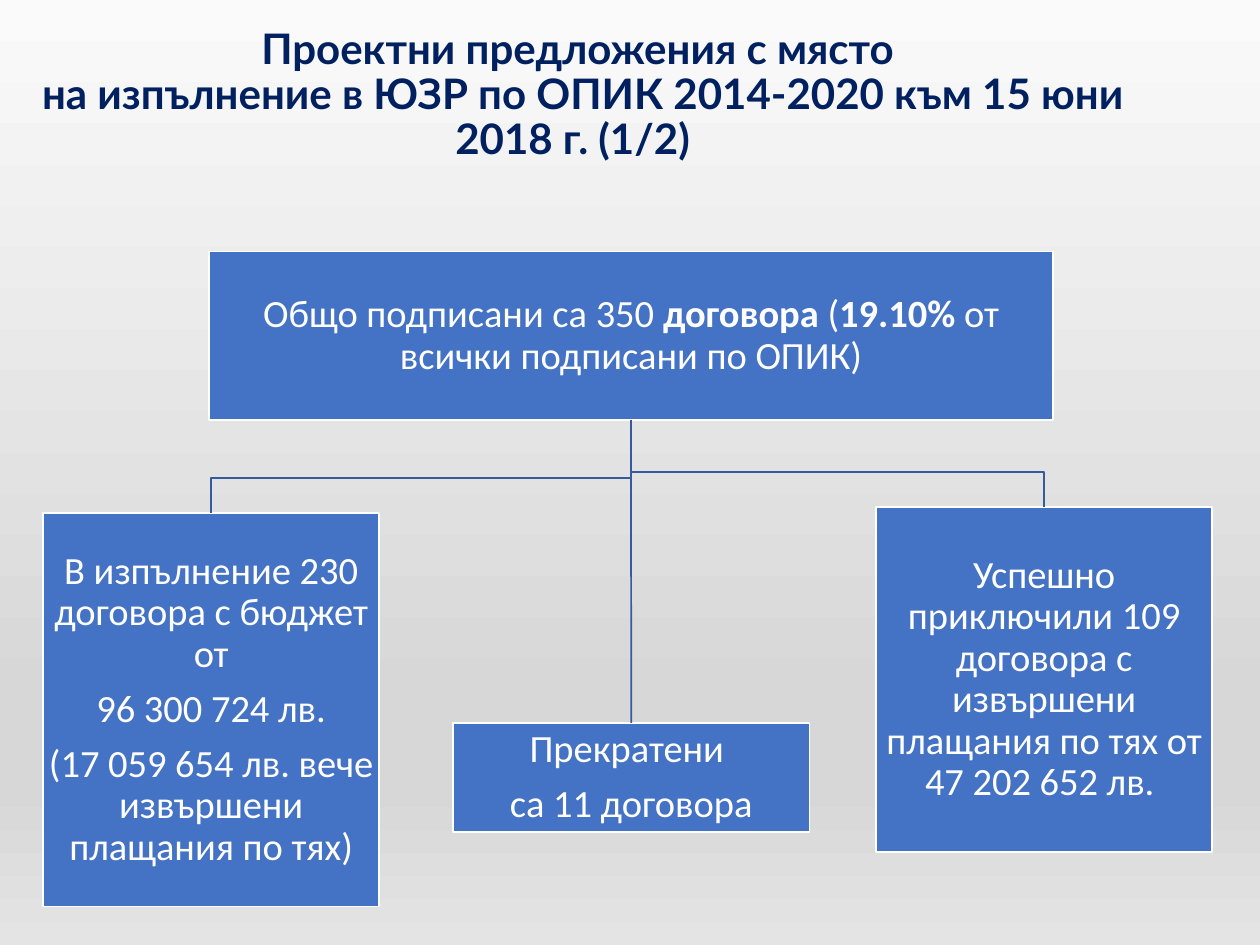
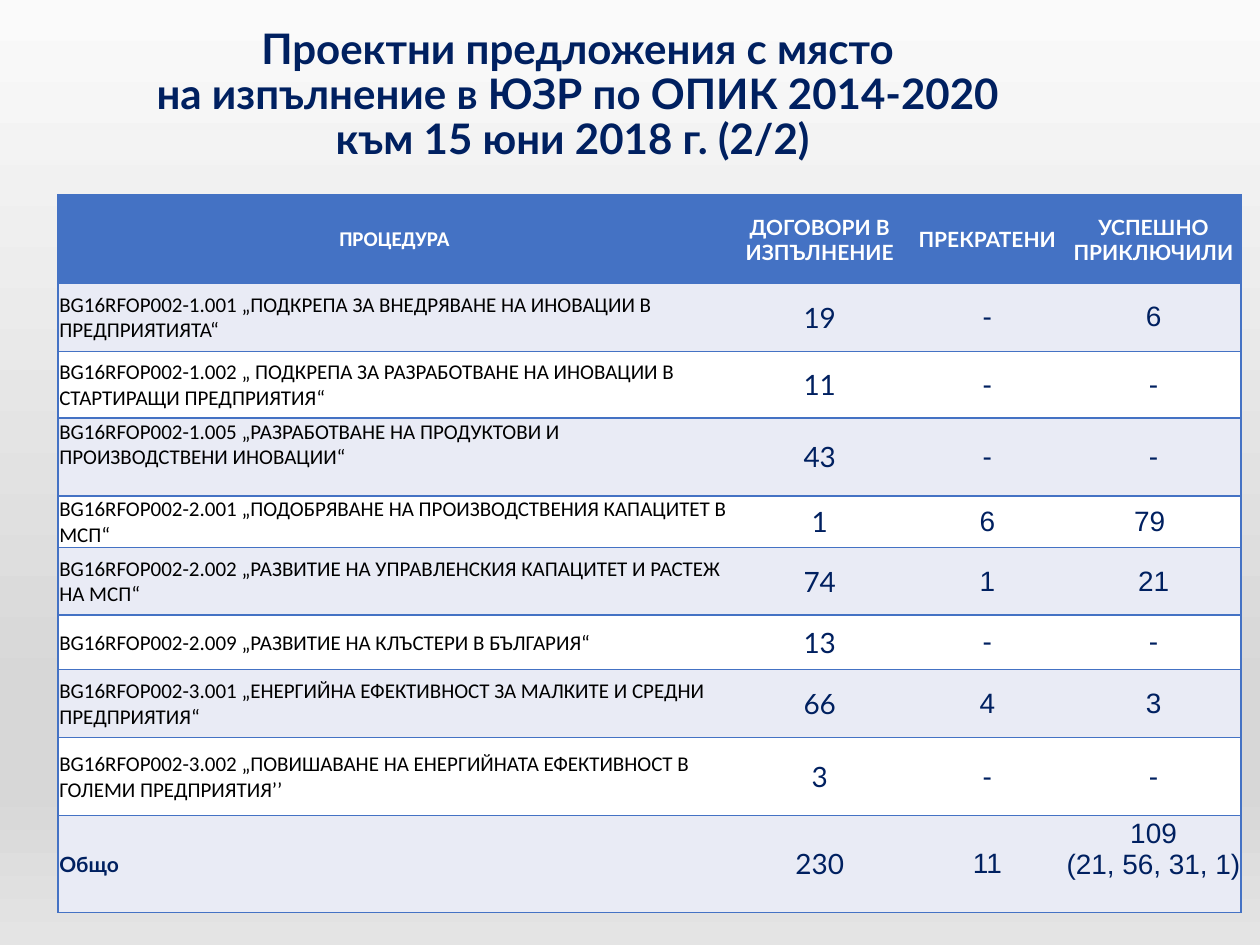
import pptx
import pptx.dml.color
import pptx.enum.shapes
import pptx.enum.text
import pptx.oxml
import pptx.oxml.ns
import pptx.util
import lxml.etree

Pt = pptx.util.Pt
RGBColor = pptx.dml.color.RGBColor
qn = pptx.oxml.ns.qn
CENTER = pptx.enum.text.PP_ALIGN.CENTER
LEFT = pptx.enum.text.PP_ALIGN.LEFT
MIDDLE = pptx.enum.text.MSO_ANCHOR.MIDDLE

NAVY = RGBColor(0x00, 0x20, 0x60)
BLUE = RGBColor(0x44, 0x72, 0xC4)
LINE_BLUE = RGBColor(0x36, 0x5B, 0x9D)
BAND = RGBColor(0xE9, 0xEB, 0xF5)
WHITE = RGBColor(0xFF, 0xFF, 0xFF)
BLACK = RGBColor(0x00, 0x00, 0x00)
BACKGROUND_STOPS = [(0, "FAFAFA"), (74, "D7D7D7"), (83, "D7D7D7"), (100, "E4E4E4")]

TITLE_FONT = {"name": "Lato", "size": Pt(24), "bold": True}
BOX_FONT = {"name": "Calibri", "size": Pt(22)}


def write_paragraph(paragraph, runs, font, color, alignment=CENTER):
    """Write (text, bold) runs; a vertical tab in the text is a line break."""
    paragraph.alignment = alignment
    for text, bold in runs:
        for index, line in enumerate(text.split("\v")):
            if index:
                paragraph.add_line_break()
            run = paragraph.add_run()
            run.text = line
            for name, value in {**font, "bold": bold}.items():
                setattr(run.font, name, value)
            run.font.color.rgb = color


def set_frame(frame, left, top, right, bottom):
    """Wrap the text, centre it vertically and set the margins."""
    margins = {"left": left, "top": top, "right": right, "bottom": bottom}
    for side, margin in margins.items():
        setattr(frame, "margin_" + side, Pt(margin))
    frame.word_wrap = True
    frame.vertical_anchor = MIDDLE


presentation = pptx.Presentation()
presentation.slide_width = Pt(720)
presentation.slide_height = Pt(540)

# Shared background
master = presentation.slide_master
background = master.background.fill
background.gradient()
background.gradient_angle = 270
stop_list = master.element.find(".//" + qn("p:bg")).find(".//" + qn("a:gsLst"))
for stop in list(stop_list):
    stop_list.remove(stop)
for position, color in BACKGROUND_STOPS:
    stop = lxml.etree.SubElement(stop_list, qn("a:gs"), pos=str(position * 1000))
    lxml.etree.SubElement(stop, qn("a:srgbClr"), val=color)

# Slides with their titles
TITLES = [
    "Проектни предложения с място\v на изпълнение в ЮЗР по ОПИК 2014-2020 към 15 юни 2018 г. (1/2) ",
    "Проектни предложения с място\v на изпълнение в ЮЗР по ОПИК 2014-2020 \vкъм 15 юни 2018 г. (2/2) ",
]
slides = []
for title in TITLES:
    slide = presentation.slides.add_slide(presentation.slide_layouts[6])
    title_box = slide.shapes.add_textbox(Pt(8.6), Pt(14.4), Pt(643), Pt(80.6))
    set_frame(title_box.text_frame, 7.2, 3.6, 7.2, 3.6)
    paragraph = title_box.text_frame.paragraphs[0]
    paragraph.line_spacing = 0.9
    write_paragraph(paragraph, [(title, True)], TITLE_FONT, NAVY)
    slides.append(slide)
chart_slide, table_slide = slides

# Slide 1: contract boxes as left, top, width, height, paragraphs of runs
CONTRACT_BOXES = {
    "signed": (119.5, 143.7, 482.2, 96.4, [
        [("Общо подписани са 350 ", False), ("договора ", True), ("(", False),
         ("19.10% ", True), ("от всички подписани по ОПИК)", False)]]),
    "running": (24.6, 293.1, 192.2, 225, [
        [("В изпълнение 230 договора с бюджет от", False)],
        [("96 300 724 лв.", False)],
        [("(17 059 654 лв. вече извършени плащания по тях)", False)]]),
    "terminated": (258.8, 413.1, 203.8, 62.4, [
        [("Прекратени ", False)],
        [("са 11 договора", False)]]),
    "completed": (500.6, 289.7, 192.2, 197.2, [
        [("Успешно приключили 109 договора с извършени плащания по тях от 47 202 652 лв. ", False)]]),
}
boxes = {}
for name, (left, top, width, height, paragraphs) in CONTRACT_BOXES.items():
    box = chart_slide.shapes.add_shape(
        pptx.enum.shapes.MSO_SHAPE.RECTANGLE, Pt(left), Pt(top), Pt(width), Pt(height))
    box.shadow.inherit = False
    box.fill.solid()
    box.fill.fore_color.rgb = BLUE
    box.line.color.rgb = WHITE
    box.line.width = Pt(1)
    frame = box.text_frame
    set_frame(frame, 1.4, 1.4, 1.4, 1.4)
    for index, runs in enumerate(paragraphs):
        paragraph = frame.add_paragraph() if index else frame.paragraphs[0]
        paragraph.line_spacing = 0.9
        paragraph.space_after = Pt(7.7)
        write_paragraph(paragraph, runs, BOX_FONT, WHITE)
    boxes[name] = box

# Branches from the signed contracts; side branches bend above their box
signed = boxes["signed"]
start_x = signed.left + signed.width // 2
start_y = signed.top + signed.height
branches = []
for name in ("running", "completed"):
    box = boxes[name]
    end_x = box.left + box.width // 2
    bend_y = box.top - Pt(20)
    builder = chart_slide.shapes.build_freeform(start_x, start_y)
    builder.add_line_segments(
        [(start_x, bend_y), (end_x, bend_y), (end_x, box.top)], close=False)
    branch = builder.convert_to_shape()
    branch.shadow.inherit = False
    branch.fill.background()
    branches.append(branch)
trunk = chart_slide.shapes.add_connector(
    pptx.enum.shapes.MSO_CONNECTOR.STRAIGHT, start_x, start_y, start_x, boxes["terminated"].top)
trunk.begin_connect(signed, 2)
trunk.end_connect(boxes["terminated"], 0)
branches.append(trunk)
for branch in branches:
    branch.line.color.rgb = LINE_BLUE
    branch.line.width = Pt(1)
lxml.etree.SubElement(trunk.element.spPr, qn("a:effectLst"))

# Slide 2: procedures table
COLUMN_WIDTHS = [384.5, 101.5, 90, 100]
ROW_HEIGHTS = [50.6, 39, 38, 44.6, 29.6, 38.6, 31, 39, 44.6, 53]
ROWS = [
    ("ПРОЦЕДУРА", "ДОГОВОРИ В ИЗПЪЛНЕНИЕ", "ПРЕКРАТЕНИ", "УСПЕШНО ПРИКЛЮЧИЛИ"),
    ("BG16RFOP002-1.001 „ПОДКРЕПА ЗА ВНЕДРЯВАНЕ НА ИНОВАЦИИ В ПРЕДПРИЯТИЯТА“", "19", "-", "6"),
    ("BG16RFOP002-1.002 „ ПОДКРЕПА ЗА РАЗРАБОТВАНЕ НА ИНОВАЦИИ В СТАРТИРАЩИ ПРЕДПРИЯТИЯ“", "11", "-", "-"),
    ("BG16RFOP002-1.005 „РАЗРАБОТВАНЕ НА ПРОДУКТОВИ И ПРОИЗВОДСТВЕНИ ИНОВАЦИИ“", "43", "-", "-"),
    ("BG16RFOP002-2.001 „ПОДОБРЯВАНЕ НА ПРОИЗВОДСТВЕНИЯ КАПАЦИТЕТ В МСП“", "1", "6", "79 "),
    ("BG16RFOP002-2.002 „РАЗВИТИЕ НА УПРАВЛЕНСКИЯ КАПАЦИТЕТ И РАСТЕЖ НА МСП“", "74", "1", "21"),
    ("BG16RFOP002-2.009 „РАЗВИТИЕ НА КЛЪСТЕРИ В БЪЛГАРИЯ“", "13", "-", "-"),
    ("BG16RFOP002-3.001 „ЕНЕРГИЙНА ЕФЕКТИВНОСТ ЗА МАЛКИТЕ И СРЕДНИ ПРЕДПРИЯТИЯ“", "66", "4", "3"),
    ("BG16RFOP002-3.002 „ПОВИШАВАНЕ НА ЕНЕРГИЙНАТА ЕФЕКТИВНОСТ В ГОЛЕМИ ПРЕДПРИЯТИЯ’’", "3", "-", "-"),
    ("Общо", "230", "11", "109\n(21, 56, 31, 1)"),
]
# Cells whose text sits above the middle, by row and column
RAISED_CELLS = {(3, 0): 14.6, (9, 3): 17}
NO_STYLE = "{2D5ABB26-0587-4C30-8999-92F81FD0307C}"
LAST_ROW = len(ROWS) - 1
LAST_COLUMN = len(COLUMN_WIDTHS) - 1

table_frame = table_slide.shapes.add_table(
    len(ROWS), len(COLUMN_WIDTHS), Pt(33.2), Pt(111.2), Pt(sum(COLUMN_WIDTHS)), Pt(sum(ROW_HEIGHTS)))
table = table_frame.table
table.first_row = False
table.horz_banding = False
table_frame.element.find(".//" + qn("a:tableStyleId")).text = NO_STYLE
for column, width in zip(table.columns, COLUMN_WIDTHS):
    column.width = Pt(width)

for row_index, row in enumerate(ROWS):
    table.rows[row_index].height = Pt(ROW_HEIGHTS[row_index])
    for column_index, text in enumerate(row):
        cell = table.cell(row_index, column_index)
        header = row_index == 0
        label = column_index == 0
        total_label = label and row_index == LAST_ROW
        margin = 0.7 if header or label else 0
        set_frame(cell, margin, margin, margin, RAISED_CELLS.get((row_index, column_index), 0))

        # Borders: rules between rows, frame at the outer sides
        sides = ["a:lnT", "a:lnB"]
        if label:
            sides.insert(0, "a:lnL")
        if column_index == LAST_COLUMN:
            sides.insert(0, "a:lnR")
        properties = cell._tc.get_or_add_tcPr()
        for side in sides:
            line = lxml.etree.SubElement(properties, qn(side), w=str(Pt(1)))
            fill = lxml.etree.SubElement(line, qn("a:solidFill"))
            lxml.etree.SubElement(fill, qn("a:srgbClr"), val=str(BLUE))
        cell.fill.solid()
        cell.fill.fore_color.rgb = BLUE if header else BAND if row_index % 2 else WHITE

        # Text
        if label:
            font_name = "Lato" if total_label else "Calibri"
        else:
            font_name = "Lato" if header or column_index == 1 else "Arial"
        font = {"name": font_name, "size": Pt(12 if header or label else 16)}
        color = WHITE if header else BLACK if label and not total_label else NAVY
        alignment = LEFT if label and not header else CENTER
        for index, line_text in enumerate(text.split("\n")):
            frame = cell.text_frame
            paragraph = frame.add_paragraph() if index else frame.paragraphs[0]
            write_paragraph(paragraph, [(line_text, header or total_label)], font, color, alignment)

presentation.save("out.pptx")
